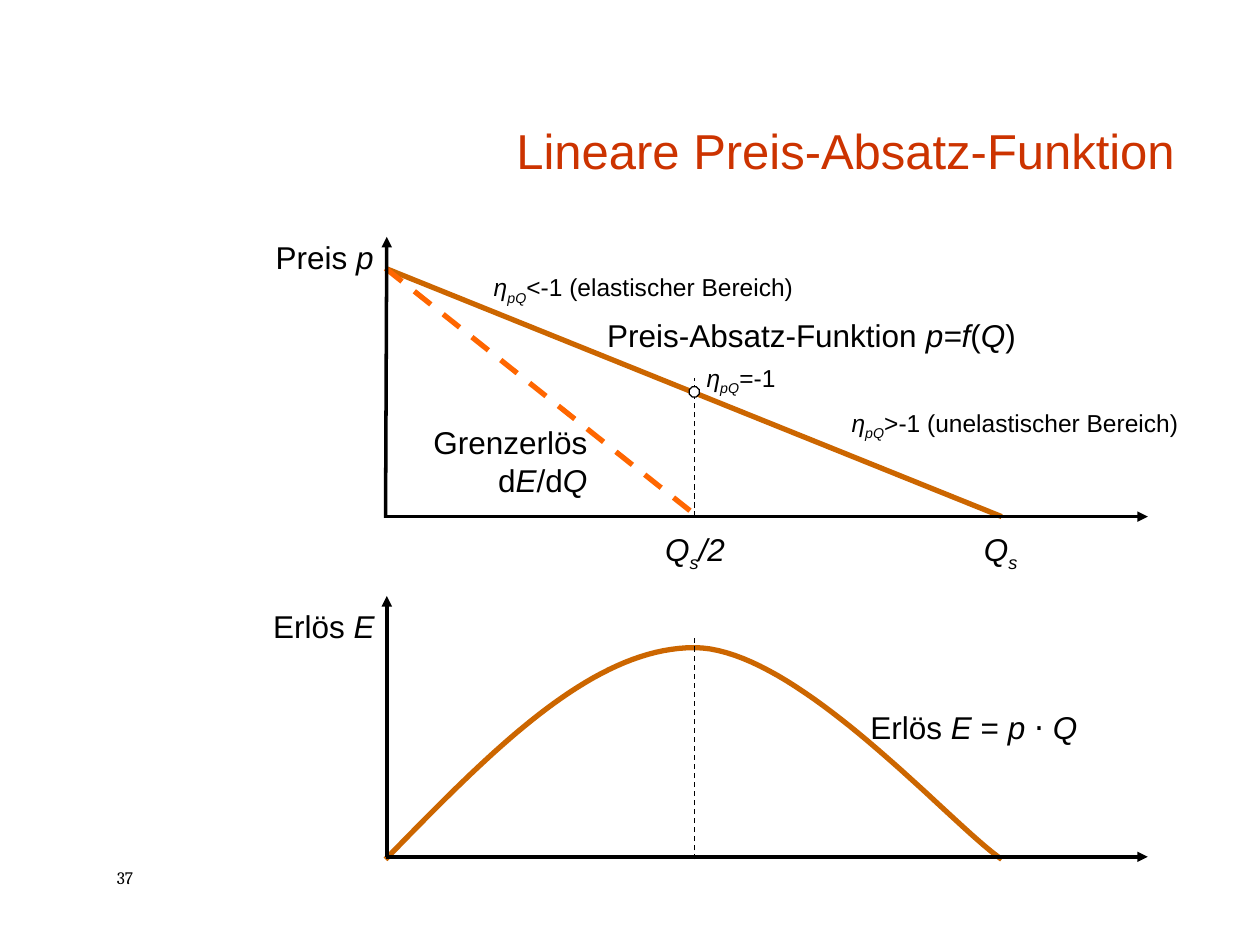
from dataclasses import dataclass

from lxml.etree import SubElement
from pptx import Presentation
from pptx.dml.color import RGBColor
from pptx.enum.dml import MSO_LINE
from pptx.enum.shapes import MSO_CONNECTOR, MSO_SHAPE
from pptx.enum.text import MSO_ANCHOR, PP_ALIGN
from pptx.oxml.ns import qn
from pptx.util import Emu, Pt

PX = 9144


@dataclass(frozen=True)
class Theme:
    black: RGBColor = RGBColor(0x00, 0x00, 0x00)
    white: RGBColor = RGBColor(0xFF, 0xFF, 0xFF)
    title_red: RGBColor = RGBColor(0xCC, 0x33, 0x00)
    curve_brown: RGBColor = RGBColor(0xCC, 0x66, 0x00)
    marginal_orange: RGBColor = RGBColor(0xFF, 0x66, 0x00)
    body_font: str = "Arial"
    number_font: str = "Cambria"
    title_size: int = 28
    label_size: int = 18
    note_size: int = 14
    number_size: int = 10
    curve_width: float = 3
    axis_width: float = 2
    guide_width: float = 0.75


class SlideBuilder:
    """Draws styled elements on one slide, with lengths in px."""

    def __init__(self, slide, theme):
        self.slide = slide
        self.theme = theme

    def text(self, box, runs, size=None, color=None, font=None,
             align=PP_ALIGN.LEFT, anchor=MSO_ANCHOR.TOP, spacing=None):
        shape = self.slide.shapes.add_textbox(*(Emu(value * PX) for value in box))
        frame = shape.text_frame
        frame.word_wrap = True
        frame.vertical_anchor = anchor
        paragraph = frame.paragraphs[0]
        paragraph.alignment = align
        if spacing:
            paragraph.line_spacing = spacing
        for content, style in runs:
            if content == "\n":
                paragraph.add_line_break()
                continue
            run = paragraph.add_run()
            run.text = content
            run.font.name = font or self.theme.body_font
            run.font.size = Pt(size or self.theme.label_size)
            run.font.color.rgb = color or self.theme.black
            run.font.italic = "i" in style
            if "s" in style:
                run._r.get_or_add_rPr().set("baseline", "-25000")

    def elasticity(self, box, relation, spacing=None):
        runs = [("η", "i"), ("pQ", "is"), (relation, "")]
        self.text(box, runs, size=self.theme.note_size, spacing=spacing)

    def stroke(self, shape, color, width, dashed=False):
        shape.line.color.rgb = color
        shape.line.width = Pt(width)
        if dashed:
            shape.line.dash_style = MSO_LINE.DASH

    def line(self, start, end, color, width, dashed=False, arrow=False):
        ends = (Emu(value * PX) for value in (*start, *end))
        connector = self.slide.shapes.add_connector(MSO_CONNECTOR.STRAIGHT, *ends)
        self.stroke(connector, color, width, dashed)
        properties = connector._element.spPr
        if arrow:
            SubElement(properties.find(qn("a:ln")), qn("a:tailEnd"), type="triangle")
        SubElement(properties, qn("a:effectLst"))

    def axis(self, start, end):
        self.line(start, end, self.theme.black, self.theme.axis_width, arrow=True)

    def guide(self, start, end):
        self.line(start, end, self.theme.black, self.theme.guide_width, dashed=True)

    def outline(self, points, color, dashed=False):
        scaled = [(x * PX, y * PX) for x, y in points]
        builder = self.slide.shapes.build_freeform(*scaled[0], scale=1.0)
        builder.add_line_segments(scaled[1:], close=False)
        shape = builder.convert_to_shape()
        shape.shadow.inherit = False
        shape.fill.background()
        self.stroke(shape, color, self.theme.curve_width, dashed)

    def marker(self, box):
        shape = self.slide.shapes.add_shape(
            MSO_SHAPE.OCTAGON, *(Emu(value * PX) for value in box))
        shape.adjustments[0] = 0.29
        shape.shadow.inherit = False
        shape.fill.solid()
        shape.fill.fore_color.rgb = self.theme.white
        self.stroke(shape, self.theme.black, self.theme.guide_width)


def bezier(controls, steps=40):
    """Return points along a cubic curve."""
    points = []
    for step in range(steps + 1):
        t = step / steps
        weights = ((1 - t) ** 3, 3 * t * (1 - t) ** 2, 3 * t ** 2 * (1 - t), t ** 3)
        points.append(tuple(sum(weight * control[axis]
                                for weight, control in zip(weights, controls))
                            for axis in (0, 1)))
    return points


def main():
    """Build the slide and save it."""
    presentation = Presentation()
    presentation.slide_width = Emu(1000 * PX)
    presentation.slide_height = Emu(750 * PX)
    theme = Theme()
    builder = SlideBuilder(
        presentation.slides.add_slide(presentation.slide_layouts[6]), theme)
    left, middle, right, axis_end = 306, 551, 795, 911

    builder.text((83, 683, 67, 27), [("37", "")],
                 size=theme.number_size, font=theme.number_font)
    builder.text((209, 42, 733, 105), [("Lineare Preis-Absatz-Funktion", "")],
                 size=theme.title_size, color=theme.title_red,
                 align=PP_ALIGN.RIGHT, anchor=MSO_ANCHOR.BOTTOM)

    builder.text((681, 557, 269, 40),
                 [("Erlös ", ""), ("E", "i"), (" = ", ""), ("p ⋅ Q", "i")])
    rising = bezier([(left, 682), (388, 598), (469, 514), (middle, 514)])
    falling = bezier([(middle, 514), (632, 514), (754, 654), (right, 682)])
    builder.outline(rising + falling[1:], theme.curve_brown)
    builder.text((207, 477, 107, 40), [("Erlös ", ""), ("E", "i")])
    builder.guide((middle, 682), (middle, 506))
    builder.axis((307, 680), (307, 473))
    builder.axis((left, 680), (axis_end, 680))

    builder.line((left, 213), (right, 410), theme.curve_brown, theme.curve_width)
    builder.text((472, 246, 458, 40),
                 [("Preis-Absatz-Funktion ", ""), ("p=f", "i"), ("(", ""),
                  ("Q", "i"), (")", "")])
    builder.text((209, 184, 114, 40), [("Preis ", ""), ("p", "i")])
    builder.guide((middle, 410), (middle, 300))
    quantity = [("Q", "i"), ("s", "is")]
    builder.text((771, 402, 65, 52), quantity, spacing=1.4)
    builder.outline([(left, 213), (middle, 408)], theme.marginal_orange, dashed=True)
    builder.text((307, 331, 169, 70),
                 [("Grenzerlös", ""), ("\n", ""), ("d", ""), ("E", "i"),
                  ("/d", ""), ("Q", "i")], align=PP_ALIGN.RIGHT)
    builder.text((518, 402, 114, 52), quantity + [("/2", "i")], spacing=1.4)
    builder.elasticity((551, 278, 134, 38), "=-1", spacing=1.2)
    builder.elasticity((666, 319, 292, 33), ">-1 (unelastischer Bereich)")
    builder.elasticity((382, 206, 375, 38), "<-1 (elastischer Bereich)", spacing=1.2)
    builder.axis((left, 411), (307, 188))
    builder.axis((307, 410), (axis_end, 410))
    builder.marker((547, 307, 8, 8))

    presentation.save("out.pptx")


if __name__ == "__main__":
    main()
